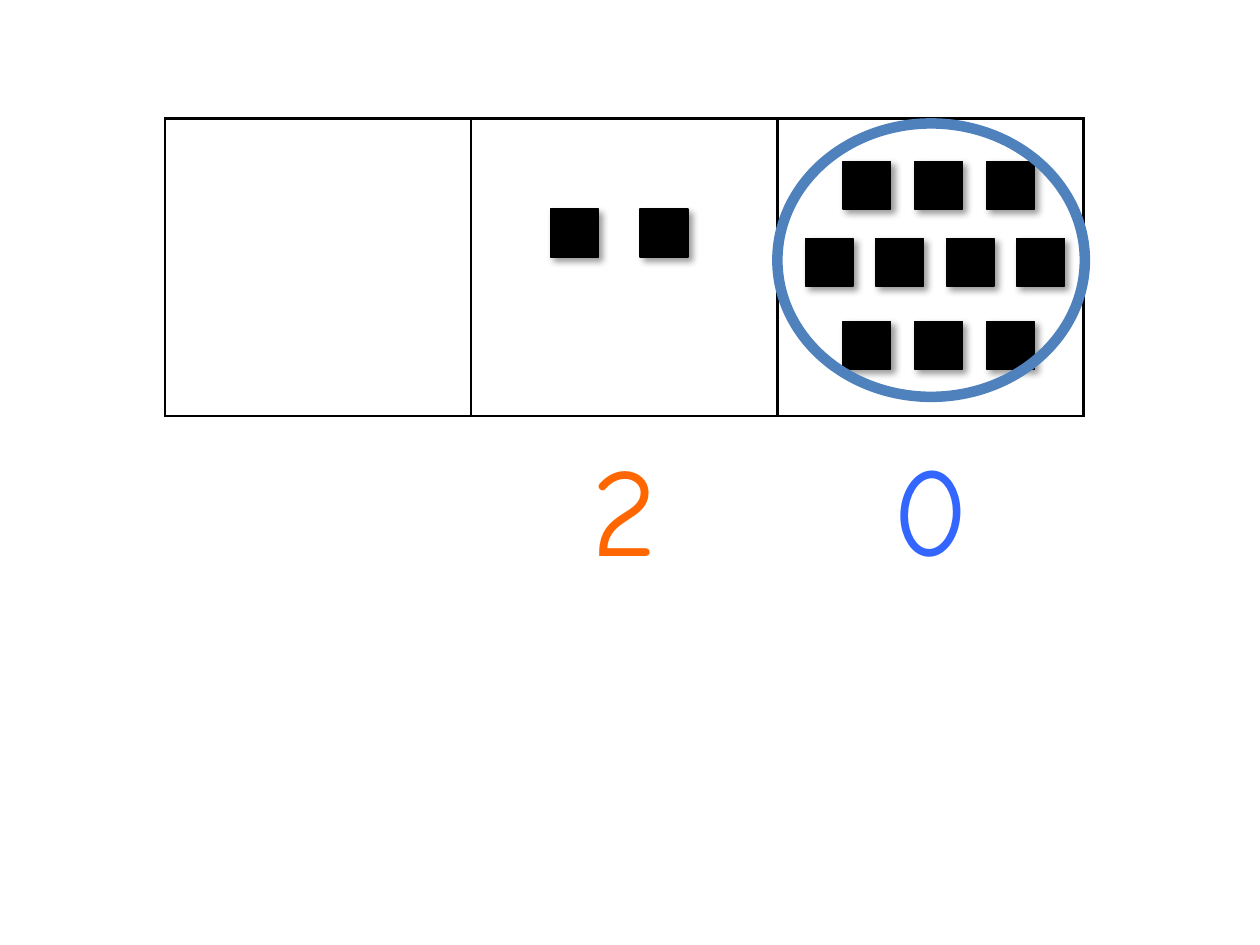
"""Build a place-value chart slide with ten circled ones."""
from lxml import etree
from pptx import Presentation
from pptx.dml.color import RGBColor
from pptx.enum.shapes import MSO_SHAPE
from pptx.enum.text import PP_ALIGN
from pptx.oxml import parse_xml
from pptx.oxml.ns import nsdecls, qn
from pptx.util import Inches, Pt

RECTANGLE = MSO_SHAPE.RECTANGLE
ELLIPSE = MSO_SHAPE.OVAL
CENTER = PP_ALIGN.CENTER

COLORS = {"black": "000000", "ring": "4F81BD", "tens": "FF6600", "ones": "3366FF"}
FONT = "Comic Neue"
PLAIN_TABLE_STYLE = "{2D5ABB26-0587-4C30-8999-92F81FD0307C}"
CHART_LEFT, COLUMN_WIDTH, ROW_HEIGHT = 1.31, 2.43, 2.36
COUNTER_SIZE = 0.38
COUNTER_ROWS = [
    (4.37, 1.66, 0.71, 2),
    (6.69, 1.28, 0.57, 3),
    (6.39, 1.89, 0.56, 4),
    (6.69, 2.55, 0.57, 3),
]


def rgb(name):
    """Return the named colour."""
    return RGBColor.from_string(COLORS[name])


def add_border(cell):
    """Draw a black line on all four sides of a cell."""
    properties = cell._tc.get_or_add_tcPr()
    for side in ("lnL", "lnR", "lnT", "lnB"):
        properties.append(parse_xml(
            f'<a:{side} {nsdecls("a")} w="{Pt(1.5)}"><a:solidFill>'
            f'<a:srgbClr val="{COLORS["black"]}"/></a:solidFill></a:{side}>'))


def add_place_row(slide, top, digits=None):
    """Add one row of three places, with digits or else with borders."""
    table = slide.shapes.add_table(
        1, 3, Inches(CHART_LEFT), Inches(top),
        Inches(3 * COLUMN_WIDTH), Inches(ROW_HEIGHT)).table
    table.first_row = table.horz_banding = False
    table._tbl.tblPr.find(qn("a:tableStyleId")).text = PLAIN_TABLE_STYLE
    for column, cell in enumerate(table.iter_cells()):
        if digits is None:
            add_border(cell)
        elif column in digits:
            write_digit(cell, *digits[column])
        cell.fill.background()


def write_digit(cell, digit, color):
    """Write one large centred digit in a cell."""
    cell.text_frame.text = digit
    paragraph = cell.text_frame.paragraphs[0]
    paragraph.alignment = CENTER
    font = paragraph.runs[0].font
    font.name, font.size = FONT, Pt(72)
    font.color.rgb = rgb(color)


def add_counter(slide, left, top):
    """Add one black square counter with a soft shadow."""
    counter = slide.shapes.add_shape(
        RECTANGLE, Inches(left), Inches(top),
        Inches(COUNTER_SIZE), Inches(COUNTER_SIZE))
    counter.fill.solid()
    counter.fill.fore_color.rgb = rgb("black")
    counter.line.color.rgb = rgb("black")
    counter.line.width = Pt(0.75)
    counter.shadow.inherit = False
    effects = counter._element.spPr.find(qn("a:effectLst"))
    shadow = etree.SubElement(
        effects, qn("a:outerShdw"), blurRad=str(Pt(4)), dist=str(Pt(3)),
        dir=str(45 * 60000), algn="tl", rotWithShape="0")
    shade = etree.SubElement(shadow, qn("a:srgbClr"), val=COLORS["black"])
    etree.SubElement(shade, qn("a:alpha"), val="40000")


def add_ring(slide):
    """Circle the ten ones."""
    ring = slide.shapes.add_shape(
        ELLIPSE, Inches(6.17), Inches(0.98), Inches(2.44), Inches(2.17))
    ring.fill.background()
    ring.line.color.rgb = rgb("ring")
    ring.line.width = Pt(6)
    ring.shadow.inherit = False


def main():
    """Build and save the slide."""
    deck = Presentation()
    deck.slide_width, deck.slide_height = Inches(10), Inches(7.5)
    slide = deck.slides.add_slide(deck.slide_layouts[6])
    add_place_row(slide, 0.94)
    add_place_row(slide, 3.47, {1: ("2", "tens"), 2: ("0", "ones")})
    for left, top, pitch, count in COUNTER_ROWS:
        for index in range(count):
            add_counter(slide, left + index * pitch, top)
    add_ring(slide)
    deck.save("out.pptx")


if __name__ == "__main__":
    main()
